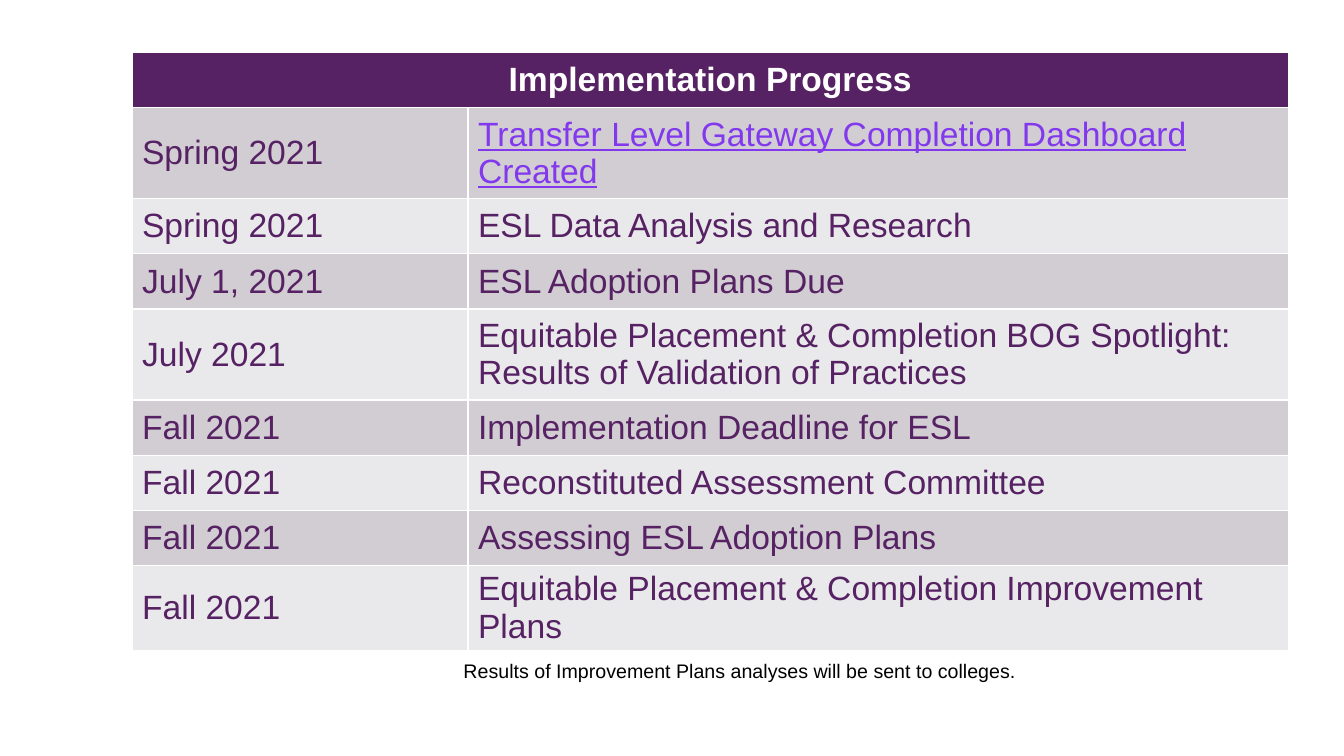
"""Build the implementation progress slide."""
from pptx import Presentation
from pptx.dml.color import RGBColor
from pptx.enum.text import MSO_ANCHOR, PP_ALIGN
from pptx.util import Pt

MIDDLE = MSO_ANCHOR.MIDDLE
CENTER = PP_ALIGN.CENTER
PLUM = RGBColor(0x56, 0x22, 0x63)
LINK = RGBColor(0x82, 0x38, 0xEC)
DARK = RGBColor(0xD1, 0xCD, 0xD3)
LIGHT = RGBColor(0xE9, 0xE8, 0xEA)
WHITE = RGBColor(0xFF, 0xFF, 0xFF)
BLACK = RGBColor(0, 0, 0)
FONT = "Arial"

HEAD = "Implementation Progress"
STEPS = [
    ("Spring 2021", "Transfer Level Gateway Completion Dashboard Created"),
    ("Spring 2021", "ESL Data Analysis and Research"),
    ("July 1, 2021", "ESL Adoption Plans Due"),
    ("July 2021", "Equitable Placement & Completion BOG Spotlight: "
                  "Results of Validation of Practices"),
    ("Fall 2021", "Implementation Deadline for ESL"),
    ("Fall 2021", "Reconstituted Assessment Committee"),
    ("Fall 2021", "Assessing ESL Adoption Plans"),
    ("Fall 2021", "Equitable Placement & Completion Improvement Plans"),
]
NOTE = "Results of Improvement Plans analyses will be sent to colleges."
COLS = (240, 586)
ROW, TALL = 39.4, 65
TALL_ROWS = (1, 4)


def style(para, size, color, bold=False):
    """Set the font of one paragraph."""
    font = para.font
    font.name, font.size, font.bold = FONT, Pt(size), bold
    font.color.rgb = color


def fill_cell(cell, text, fill, color, bold=False):
    """Write and colour one table cell."""
    cell.text = text
    cell.vertical_anchor = MIDDLE
    cell.fill.solid()
    cell.fill.fore_color.rgb = fill
    style(cell.text_frame.paragraphs[0], 24, color, bold)


def add_steps(slide):
    """Add the table of dated steps."""
    count = len(STEPS) + 1
    highs = [TALL if i in TALL_ROWS else ROW for i in range(count)]
    table = slide.shapes.add_table(
        count, len(COLS), Pt(94.3), Pt(37.6), Pt(sum(COLS)), Pt(sum(highs))
    ).table
    for col, wide in zip(table.columns, COLS):
        col.width = Pt(wide)
    for row, high in zip(table.rows, highs):
        row.height = Pt(high)

    head = table.cell(0, 0)
    head.merge(table.cell(0, 1))
    fill_cell(head, HEAD, PLUM, WHITE, True)
    head.text_frame.paragraphs[0].alignment = CENTER
    for r, step in enumerate(STEPS, 1):
        for c, text in enumerate(step):
            fill_cell(table.cell(r, c), text, DARK if r % 2 else LIGHT, PLUM)
    font = table.cell(1, 1).text_frame.paragraphs[0].font
    font.color.rgb = LINK
    font.underline = True


def add_note(slide):
    """Add the line below the table."""
    box = slide.shapes.add_textbox(Pt(324), Pt(467.3), Pt(492.5), Pt(28.8))
    frame = box.text_frame
    frame.word_wrap = True
    frame.text = NOTE
    style(frame.paragraphs[0], 14, BLACK)


def main():
    """Build and save the deck."""
    deck = Presentation()
    deck.slide_width, deck.slide_height = Pt(960), Pt(540)
    slide = deck.slides.add_slide(deck.slide_layouts[6])
    add_steps(slide)
    add_note(slide)
    deck.save("out.pptx")


if __name__ == "__main__":
    main()
